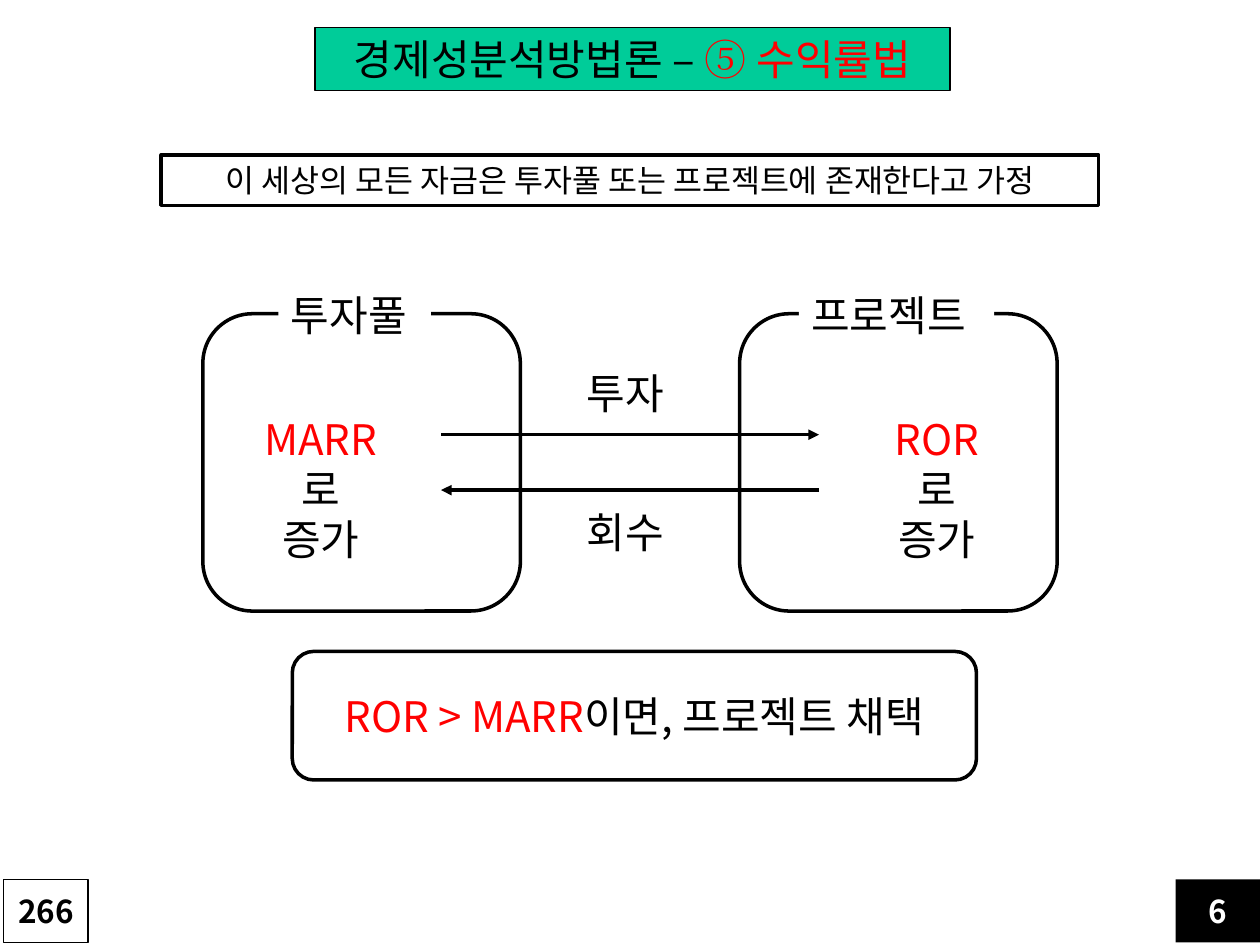
"""Build the rate-of-return method slide: investment pool against project."""
from dataclasses import dataclass
from typing import Optional

from lxml import etree
from pptx import Presentation
from pptx.dml.color import RGBColor
from pptx.enum.shapes import MSO_CONNECTOR, MSO_SHAPE
from pptx.enum.text import MSO_ANCHOR, MSO_AUTO_SIZE, PP_ALIGN
from pptx.oxml.ns import qn
from pptx.util import Emu, Pt

RECTANGLE = MSO_SHAPE.RECTANGLE
ROUNDED = MSO_SHAPE.ROUNDED_RECTANGLE
STRAIGHT = MSO_CONNECTOR.STRAIGHT
TOP, MIDDLE = MSO_ANCHOR.TOP, MSO_ANCHOR.MIDDLE
LEFT, CENTER = PP_ALIGN.LEFT, PP_ALIGN.CENTER
GROW, FIXED = MSO_AUTO_SIZE.SHAPE_TO_FIT_TEXT, MSO_AUTO_SIZE.NONE
EMU_PER_PX = 9144


@dataclass(frozen=True)
class Theme:
    font: str = "Noto Sans CJK KR"
    numeral_font: str = "Times New Roman"
    black: str = "000000"
    white: str = "FFFFFF"
    red: str = "FF0000"
    green: str = "00CC99"
    large: int = 24
    small: int = 18
    thick: float = 2
    thin: float = 0.75


THEME = Theme()


@dataclass(frozen=True)
class Run:
    text: str
    color: str = THEME.black
    font: str = THEME.font


@dataclass(frozen=True)
class Box:
    left: int
    top: int
    width: int
    height: int
    fill: Optional[str] = None
    line_width: float = 0
    geometry: MSO_SHAPE = RECTANGLE


@dataclass(frozen=True)
class Side:
    frame: Box
    title: str
    title_box: Box
    rate: str
    rate_box: Box


@dataclass(frozen=True)
class Flow:
    label: str
    label_top: int
    start: int
    end: int
    y: int


SIDES = (
    Side(Box(161, 249, 252, 236, line_width=THEME.thick, geometry=ROUNDED),
         "투자풀", Box(221, 225, 121, 51, THEME.white), "MARR", Box(185, 323, 139, 91)),
    Side(Box(587, 249, 252, 236, line_width=THEME.thick, geometry=ROUNDED),
         "프로젝트", Box(634, 225, 155, 51, THEME.white), "ROR", Box(687, 323, 113, 91)),
)
FLOWS = (Flow("투자", 287, 350, 650, 345), Flow("회수", 397, 650, 350, 389))
HEADING = Box(250, 22, 504, 50, THEME.green, THEME.thin)
ASSUMPTION = Box(128, 123, 744, 40, THEME.white, THEME.thick)
DECISION = Box(232, 517, 543, 102, line_width=THEME.thick, geometry=ROUNDED)
PAGE_NUMBERS = (
    ("6", THEME.white, Box(933, 698, 67, 50, THEME.black)),
    ("266", THEME.black, Box(3, 698, 67, 50, THEME.white, THEME.thin)),
)


def px(value: int) -> Emu:
    return Emu(value * EMU_PER_PX)


def rgb(color: str) -> RGBColor:
    return RGBColor.from_string(color)


def draw_box(slide, box: Box):
    position = [px(value) for value in (box.left, box.top, box.width, box.height)]
    if box.fill is None and not box.line_width:
        return slide.shapes.add_textbox(*position)
    shape = slide.shapes.add_shape(box.geometry, *position)
    shape.shadow.inherit = False
    if box.fill:
        shape.fill.solid()
        shape.fill.fore_color.rgb = rgb(box.fill)
    else:
        shape.fill.background()
    if box.line_width:
        shape.line.color.rgb = rgb(THEME.black)
        shape.line.width = Pt(box.line_width)
    else:
        shape.line.fill.background()
    return shape


def write(shape, *paragraphs: tuple[Run, ...], size: int = THEME.large, bold: bool = False,
          align: PP_ALIGN = CENTER, anchor: MSO_ANCHOR = TOP, wrap: bool = False,
          auto_size: MSO_AUTO_SIZE = GROW) -> None:
    frame = shape.text_frame
    frame.word_wrap = wrap
    frame.auto_size = auto_size
    frame.vertical_anchor = anchor
    for index, runs in enumerate(paragraphs):
        paragraph = frame.add_paragraph() if index else frame.paragraphs[0]
        paragraph.alignment = align
        for item in runs:
            run = paragraph.add_run()
            run.text = item.text
            run.font.size = Pt(size)
            run.font.bold = bold
            run.font.color.rgb = rgb(item.color)
            run.font.name = item.font
            properties = run.font._element
            etree.SubElement(properties, qn("a:ea")).set("typeface", item.font)


def draw_side(slide, side: Side) -> None:
    draw_box(slide, side.frame)
    write(draw_box(slide, side.title_box), (Run(side.title),), align=LEFT)
    write(draw_box(slide, side.rate_box), (Run(side.rate, THEME.red), Run("로")),
          (Run("증가"),), wrap=True, auto_size=FIXED)


def draw_flow(slide, flow: Flow) -> None:
    arrow = slide.shapes.add_connector(
        STRAIGHT, px(flow.start), px(flow.y), px(flow.end), px(flow.y))
    arrow.line.color.rgb = rgb(THEME.black)
    arrow.line.width = Pt(THEME.thick)
    etree.SubElement(arrow.line._get_or_add_ln(), qn("a:tailEnd")).set("type", "triangle")
    etree.SubElement(arrow._element.spPr, qn("a:effectLst"))
    write(draw_box(slide, Box(456, flow.label_top, 88, 51)), (Run(flow.label),), align=LEFT)


def main() -> None:
    presentation = Presentation()
    presentation.slide_width, presentation.slide_height = px(1000), px(750)
    slide = presentation.slides.add_slide(presentation.slide_layouts[6])
    for side in SIDES:
        draw_side(slide, side)
    for flow in FLOWS:
        draw_flow(slide, flow)
    write(draw_box(slide, DECISION),
          (Run("ROR > MARR", THEME.red), Run("이면, 프로젝트 채택")),
          anchor=MIDDLE, auto_size=FIXED)
    write(draw_box(slide, ASSUMPTION),
          (Run("이 세상의 모든 자금은 투자풀 또는 프로젝트에 존재한다고 가정"),), size=THEME.small)
    write(draw_box(slide, HEADING),
          (Run("경제성분석방법론 – "), Run("⑤ ", THEME.red, THEME.numeral_font),
           Run("수익률법", THEME.red)))
    for number, color, box in PAGE_NUMBERS:
        write(draw_box(slide, box), (Run(number, color),), size=THEME.small, bold=True,
              anchor=MIDDLE, wrap=True, auto_size=FIXED)
    presentation.save("out.pptx")


if __name__ == "__main__":
    main()
